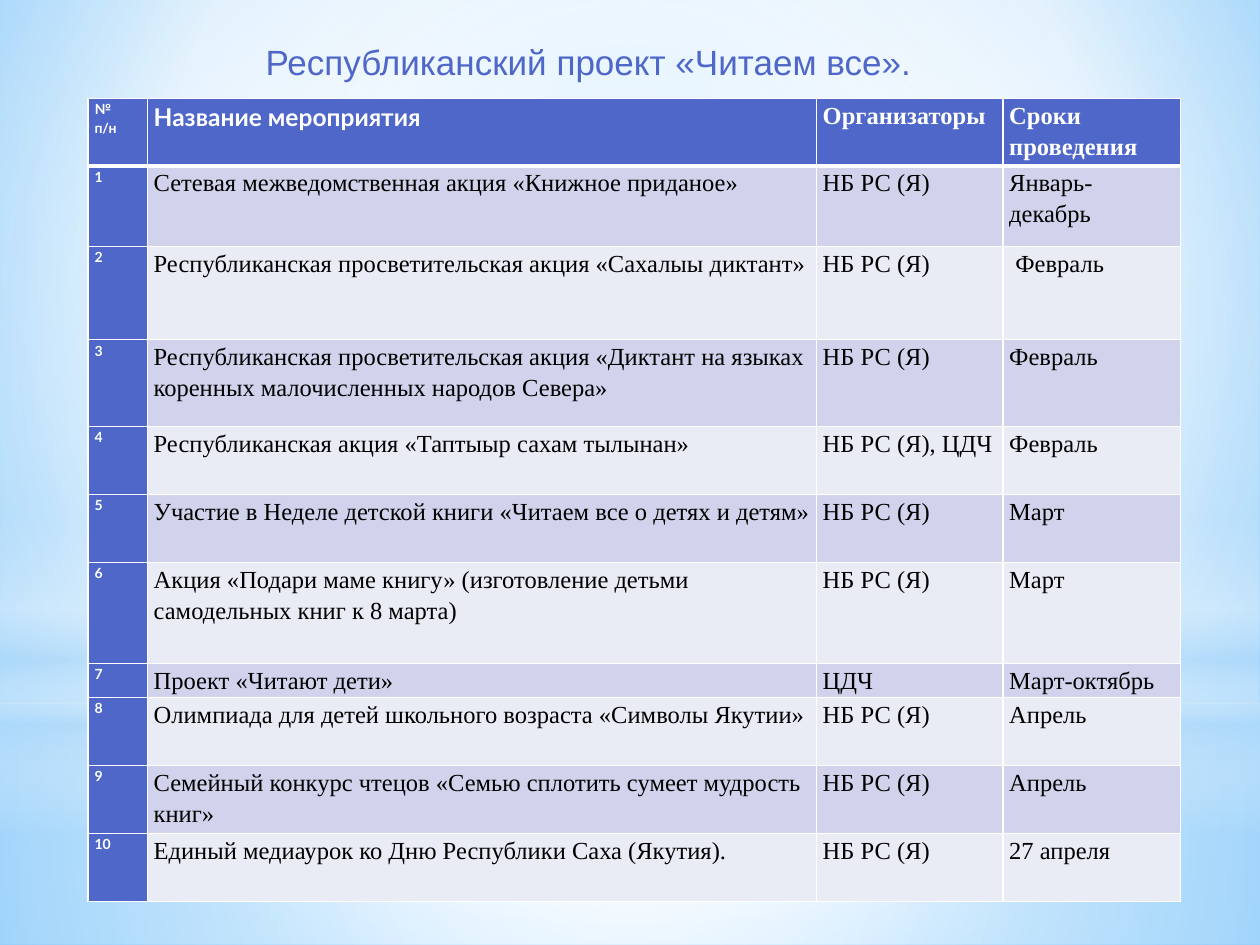
from pptx import Presentation
from pptx.dml.color import RGBColor
from pptx.enum.shapes import MSO_SHAPE
from pptx.enum.text import MSO_ANCHOR
from pptx.oxml import parse_xml
from pptx.oxml.ns import nsdecls
from pptx.util import Inches, Pt

BLUE = RGBColor(0x4E, 0x67, 0xC8)
WHITE = RGBColor(0xFF, 0xFF, 0xFF)
BLACK = RGBColor(0x00, 0x00, 0x00)
BANDS = (RGBColor(0xE9, 0xEB, 0xF5), RGBColor(0xD0, 0xD3, 0xEB))
HAZE = RGBColor(0xB4, 0xDC, 0xFA)
SKY = RGBColor(0x9E, 0xD5, 0xFF)
DEEP_SKY = RGBColor(0x5B, 0xB9, 0xFF)

SERIF = "Times New Roman"
SANS = "Lato"
CENTRE = (50, 50, 50, 50)
COLUMN_WIDTHS = (0.47, 5.31, 1.48, 1.41)
ROW_HEIGHTS = (0.53, 0.64, 0.74, 0.69, 0.54, 0.54, 0.8, 0.27, 0.54, 0.54, 0.54)
HEADINGS = (
    ("№\nп/н", 8, SANS),
    ("Название мероприятия", 14, SANS),
    ("Организаторы", 14, SERIF),
    ("Сроки проведения", 14, SERIF),
)
LIBRARY = "НБ РС (Я)"
EVENTS = (
    ("Сетевая межведомственная акция «Книжное приданое»", LIBRARY, "Январь-декабрь"),
    ("Республиканская просветительская акция «Сахалыы диктант»", LIBRARY, " Февраль"),
    ("Республиканская просветительская акция «Диктант на языках "
     "коренных малочисленных народов Севера»", LIBRARY, "Февраль"),
    ("Республиканская акция «Таптыыр сахам тылынан»", "НБ РС (Я), ЦДЧ", "Февраль"),
    ("Участие в Неделе детской книги «Читаем все о детях и детям»", LIBRARY, "Март"),
    ("Акция «Подари маме книгу» (изготовление детьми самодельных книг к 8 марта)",
     LIBRARY, "Март"),
    ("Проект «Читают дети»", "ЦДЧ", "Март-октябрь"),
    ("Олимпиада для детей школьного возраста «Символы Якутии»", LIBRARY, "Апрель"),
    ("Семейный конкурс чтецов «Семью сплотить сумеет мудрость книг»", LIBRARY, "Апрель"),
    ("Единый медиаурок ко Дню Республики Саха (Якутия).", LIBRARY, "27 апреля"),
)


def apply_gradient(parent, stops, focus=None):
    """Swap the solid fill of an element for a circular or vertical gradient."""
    marks = "".join(
        f'<a:gs pos="{place * 1000}"><a:srgbClr val="{color}">'
        f'<a:alpha val="{opacity * 1000}"/></a:srgbClr></a:gs>'
        for place, color, opacity in stops
    )
    if focus:
        left, top, right, bottom = (edge * 1000 for edge in focus)
        course = (f'<a:path path="circle"><a:fillToRect l="{left}" t="{top}" '
                  f'r="{right}" b="{bottom}"/></a:path>')
    else:
        course = '<a:lin ang="5400000" scaled="0"/>'
    gradient = parse_xml(f'<a:gradFill {nsdecls("a")} rotWithShape="1">'
                         f'<a:gsLst>{marks}</a:gsLst>{course}</a:gradFill>')
    solid = parent.xpath(".//a:solidFill")[0]
    solid.getparent().replace(solid, gradient)


def add_glow(page, kind, top, height, stops, focus=None):
    """Add a full-width translucent backdrop shape."""
    glow = page.shapes.add_shape(kind, 0, Inches(top), Inches(10), Inches(height))
    glow.shadow.inherit = False
    glow.line.fill.background()
    glow.fill.solid()
    apply_gradient(glow.element.spPr, stops, focus)


def add_backdrop(page):
    """Paint the sky background and its layers of light."""
    page.background.fill.solid()
    apply_gradient(page.element.xpath("./p:cSld/p:bg")[0],
                   ((0, SKY, 100), (60, WHITE, 100), (100, DEEP_SKY, 100)),
                   (20, 10, 20, 60))
    add_glow(page, MSO_SHAPE.RECTANGLE, 5.58, 1.92,
             ((0, WHITE, 91), (37, WHITE, 76), (100, HAZE, 79)), CENTRE)
    add_glow(page, MSO_SHAPE.RECTANGLE, 0, 5.58,
             ((0, WHITE, 89), (48, WHITE, 62), (100, HAZE, 79)), CENTRE)
    add_glow(page, MSO_SHAPE.RECTANGLE, 4.12, 2.5,
             ((0, WHITE, 0), (29, WHITE, 30), (45, HAZE, 40),
              (55, WHITE, 26), (65, HAZE, 60), (100, WHITE, 0)))
    add_glow(page, MSO_SHAPE.OVAL, 1.75, 5.58,
             ((0, WHITE, 100), (56, WHITE, 0)), CENTRE)


def add_span(paragraph, text, size, font, color, bold=False):
    """Append one formatted run to a paragraph."""
    span = paragraph.add_run()
    span.text = text
    span.font.size = Pt(size)
    span.font.name = font
    span.font.bold = bold
    span.font.color.rgb = color


def add_title(page):
    """Add the project title above the table."""
    box = page.shapes.add_textbox(Inches(2.01), Inches(0.25), Inches(5.43), Inches(0.98))
    frame = box.text_frame
    frame.word_wrap = True
    frame.vertical_anchor = MSO_ANCHOR.TOP
    frame.margin_top = Inches(0.07)
    add_span(frame.paragraphs[0], "Республиканский проект «Читаем все».", 20, "Arial", BLUE)


def set_borders(cell, top=1, bottom=1):
    """Draw white borders around a cell, with widths in points."""
    properties = cell._tc.get_or_add_tcPr()
    sides = (("lnL", 1), ("lnR", 1), ("lnT", top), ("lnB", bottom))
    for index, (side, width) in enumerate(sides):
        properties.insert(index, parse_xml(
            f'<a:{side} {nsdecls("a")} w="{Pt(width)}"><a:solidFill>'
            f'<a:srgbClr val="{WHITE}"/></a:solidFill></a:{side}>'))


def fill_cell(cell, text, size, font, color, bold, fill):
    """Write the text of a table cell and colour the cell."""
    cell.margin_left = cell.margin_right = Inches(0.05)
    cell.margin_top = cell.margin_bottom = 0
    cell.fill.solid()
    cell.fill.fore_color.rgb = fill
    frame = cell.text_frame
    for index, line in enumerate(text.split("\n")):
        paragraph = frame.add_paragraph() if index else frame.paragraphs[0]
        paragraph.line_spacing = 1.15
        add_span(paragraph, line, size, font, color, bold)


def add_events_table(page):
    """Add the table of events with organisers and dates."""
    frame = page.shapes.add_table(
        len(ROW_HEIGHTS), len(COLUMN_WIDTHS), Inches(0.7), Inches(0.78),
        Inches(sum(COLUMN_WIDTHS)), Inches(sum(ROW_HEIGHTS)))
    table = frame.table
    table.first_row = table.horz_banding = False
    for column, width in zip(table.columns, COLUMN_WIDTHS):
        column.width = Inches(width)
    for row, height in zip(table.rows, ROW_HEIGHTS):
        row.height = Inches(height)
    for column, (text, size, font) in enumerate(HEADINGS):
        cell = table.cell(0, column)
        fill_cell(cell, text, size, font, WHITE, True, BLUE)
        set_borders(cell, bottom=3)
    for number, event in enumerate(EVENTS, 1):
        fill_cell(table.cell(number, 0), str(number), 8, SANS, WHITE, True, BLUE)
        for column, text in enumerate(event, 1):
            fill_cell(table.cell(number, column), text, 14, SERIF, BLACK, False,
                      BANDS[number % 2])
        for cell in table.rows[number].cells:
            set_borders(cell, top=3 if number == 1 else 1)


def main():
    """Build and save the slide."""
    deck = Presentation()
    deck.slide_width, deck.slide_height = Inches(10), Inches(7.5)
    page = deck.slides.add_slide(deck.slide_layouts[6])
    add_backdrop(page)
    add_title(page)
    add_events_table(page)
    deck.save("out.pptx")


if __name__ == "__main__":
    main()
